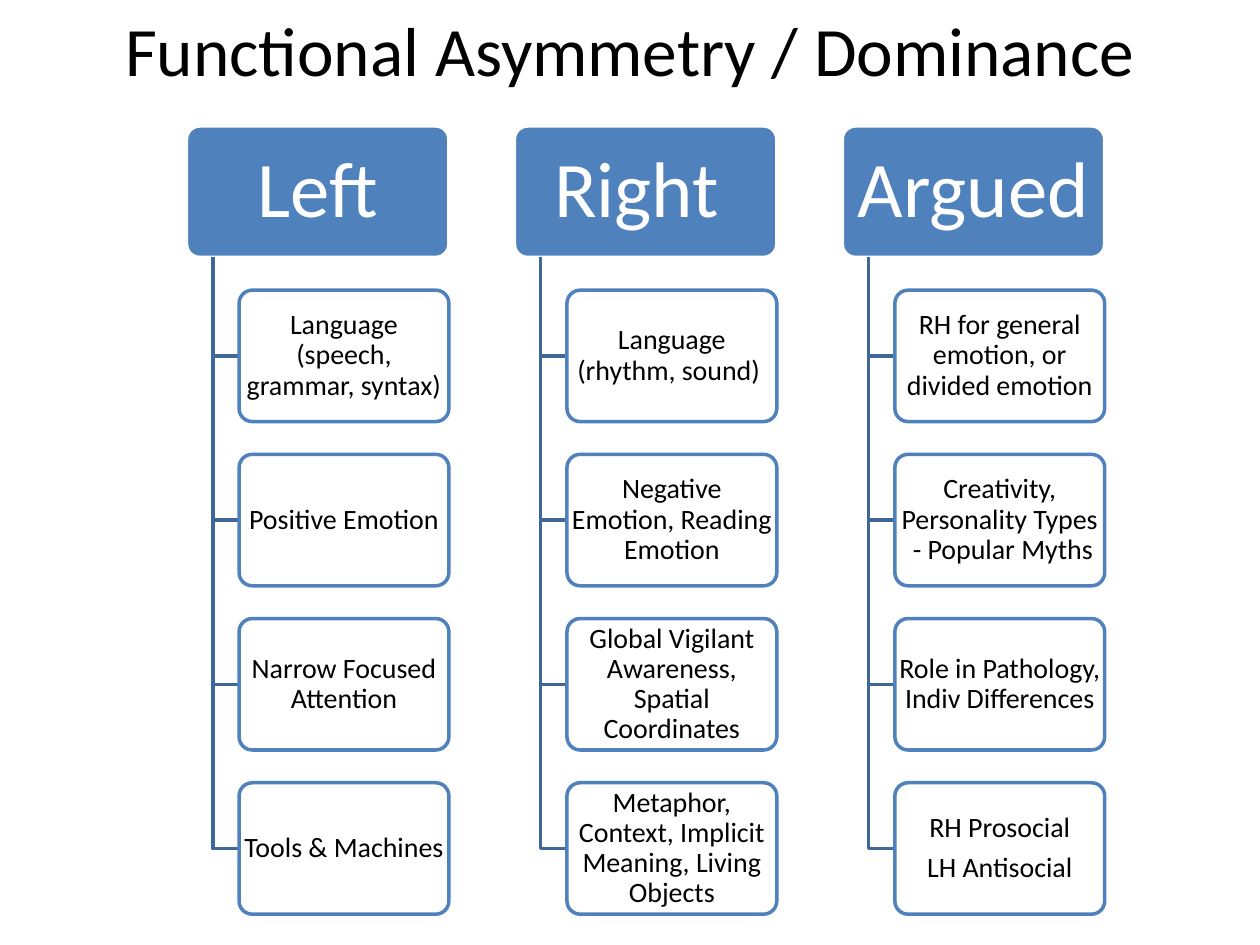
from dataclasses import dataclass

from lxml.etree import SubElement
from pptx import Presentation as new_presentation
from pptx.dml.color import RGBColor as Rgb
from pptx.enum.shapes import MSO_SHAPE as ShapeKind
from pptx.enum.text import MSO_ANCHOR as Anchor, PP_ALIGN as Align
from pptx.oxml.ns import qn
from pptx.shapes.autoshape import Shape
from pptx.slide import Slide
from pptx.util import Cm, Pt

COLORS = {
    "header": "4F81BD",
    "branch": "3F6797",
    "white": "FFFFFF",
    "black": "000000",
}
FONT = "Calibri"

# Hierarchy grid, in centimetres
FIRST_LEFT, COLUMN_STEP = 3.76, 6.61
HEADER_TOP, HEADER_WIDTH, BOX_HEIGHT = 2.54, 5.29, 2.65
TRUNK_OFFSET, ITEM_OFFSET = 0.53, 1.06
ITEM_TOP, ITEM_WIDTH, ROW_STEP = 5.85, 4.23, 3.31


@dataclass
class Column:
    header: str
    items: list[str]  # "\n" starts a paragraph, "\v" breaks a line


COLUMNS = [
    Column("Left", [
        "Language (speech, grammar, syntax)",
        "Positive Emotion",
        "Narrow Focused Attention",
        "Tools & Machines",
    ]),
    Column("Right ", [
        "Language (rhythm, sound) ",
        "Negative Emotion, Reading Emotion",
        "Global Vigilant Awareness, Spatial Coordinates",
        "Metaphor, Context, Implicit Meaning, Living Objects",
    ]),
    Column("Argued", [
        "RH for general emotion, or divided emotion",
        "Creativity, Personality Types\v - Popular Myths",
        "Role in Pathology, Indiv Differences",
        "RH Prosocial\nLH Antisocial",
    ]),
]


def rgb(name: str) -> Rgb:
    return Rgb.from_string(COLORS[name])


def write_text(shape: Shape, text: str, size: float, color: str,
               margin: float = 0, spacing: float = 1) -> None:
    frame = shape.text_frame
    frame.word_wrap = True
    frame.vertical_anchor = Anchor.MIDDLE
    frame.margin_left = frame.margin_right = Cm(margin)
    frame.margin_top = frame.margin_bottom = Cm(0)
    for index, content in enumerate(text.split("\n")):
        paragraph = frame.add_paragraph() if index else frame.paragraphs[0]
        paragraph.alignment = Align.CENTER
        paragraph.line_spacing = spacing
        if spacing < 1:
            paragraph.space_after = Pt(size * 0.35)
        for line_index, line in enumerate(content.split("\v")):
            if line_index:
                paragraph.add_line_break()
            run = paragraph.add_run()
            run.text = line
            run.font.name = FONT
            run.font.size = Pt(size)
            run.font.color.rgb = rgb(color)


def add_box(slide: Slide, left: float, top: float, width: float,
            fill: str, line: str) -> Shape:
    box = slide.shapes.add_shape(ShapeKind.ROUNDED_RECTANGLE, Cm(left), Cm(top),
                                 Cm(width), Cm(BOX_HEIGHT))
    box.adjustments[0] = 0.1
    box.shadow.inherit = False
    box.fill.solid()
    box.fill.fore_color.rgb = rgb(fill)
    box.line.color.rgb = rgb(line)
    box.line.width = Pt(2)
    return box


def add_branch(slide: Slide, column_left: float, item_top: float) -> None:
    """Draw the elbow from a header down and across to one item."""
    trunk = Cm(column_left + TRUNK_OFFSET)
    middle = Cm(item_top + BOX_HEIGHT / 2)
    builder = slide.shapes.build_freeform(trunk, Cm(HEADER_TOP + BOX_HEIGHT))
    builder.add_line_segments(
        [(trunk, middle), (Cm(column_left + ITEM_OFFSET), middle)], close=False)
    branch = builder.convert_to_shape()
    branch.shadow.inherit = False
    branch.fill.background()
    branch.line.color.rgb = rgb("branch")
    branch.line.width = Pt(2)


def add_item(slide: Slide, left: float, top: float, text: str) -> None:
    box = add_box(slide, left, top, ITEM_WIDTH, "white", "header")
    fill_color = box.fill._xPr.find(qn("a:solidFill"))[0]
    SubElement(fill_color, qn("a:alpha"), val="90000")
    write_text(box, text, 16, "black", spacing=0.9)


def add_column(slide: Slide, left: float, column: Column) -> None:
    header = add_box(slide, left, HEADER_TOP, HEADER_WIDTH, "header", "white")
    write_text(header, column.header, 45, "white", margin=0.15, spacing=0.9)
    for row, text in enumerate(column.items):
        top = ITEM_TOP + row * ROW_STEP
        add_branch(slide, left, top)
        add_item(slide, left + ITEM_OFFSET, top, text)


def main() -> None:
    presentation = new_presentation()
    presentation.slide_width, presentation.slide_height = Cm(25.4), Cm(19.05)
    slide = presentation.slides.add_slide(presentation.slide_layouts[6])

    # Title
    title = slide.shapes.add_textbox(Cm(1.27), Cm(0.2), Cm(22.86), Cm(1.57))
    write_text(title, "Functional Asymmetry / Dominance", 39.6, "black", margin=0.25)

    # Columns of the hierarchy
    for index, column in enumerate(COLUMNS):
        add_column(slide, FIRST_LEFT + index * COLUMN_STEP, column)

    presentation.save("out.pptx")


if __name__ == "__main__":
    main()
